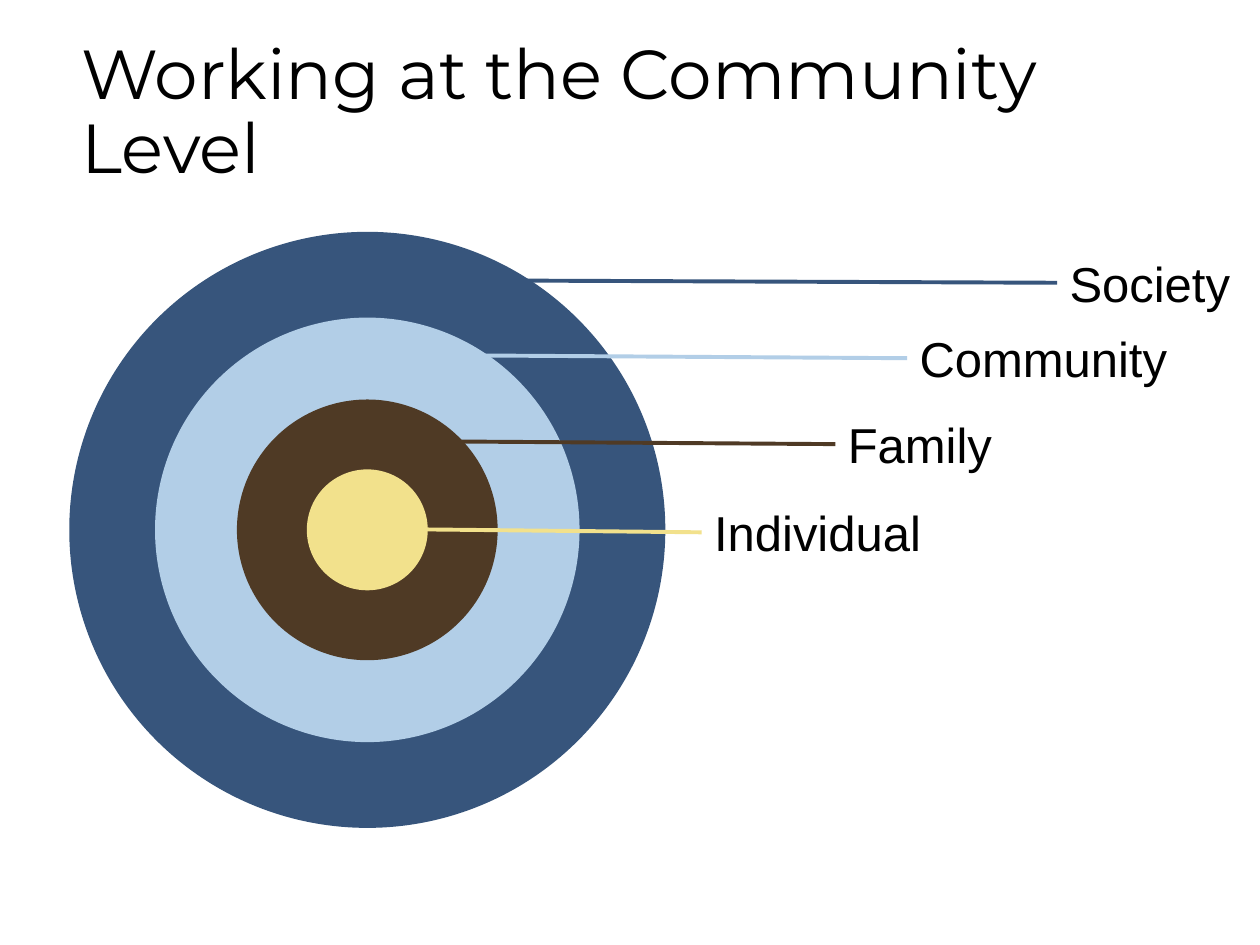
from dataclasses import dataclass

from lxml.etree import SubElement
from pptx import Presentation
from pptx.dml.color import RGBColor
from pptx.enum.shapes import MSO_CONNECTOR as Connector, MSO_SHAPE as Shape
from pptx.enum.text import MSO_ANCHOR as Anchor, MSO_AUTO_SIZE as AutoSize
from pptx.oxml.ns import qn
from pptx.util import Pt


@dataclass(frozen=True)
class Theme:
    text: str = "000000"
    society: str = "37557C"
    community: str = "B2CEE7"
    family: str = "4F3A25"
    individual: str = "F2E18C"
    title_font: str = "Montserrat"
    label_font: str = "Arial"
    title_size: float = 39.6
    label_size: float = 28
    line_width: float = 2.25


THEME = Theme()
CENTER_X, CENTER_Y = 209.9, 302.8
LABEL_HEIGHT = 41
LEFT_SIDE = 1

# name, colour, ring diameter, line start (x, y), label (left, top, width)
LEVELS = [
    ("Society", THEME.society, 340.6, (209.5, 160), (604.1, 141.1, 107.3)),
    ("Community", THEME.community, 242.6, (252, 203), (518.4, 184.2, 163.4)),
    ("Family", THEME.family, 149, (219.6, 252), (477.4, 233.3, 107.3)),
    ("Individual", THEME.individual, 69.1, (228.2, 302.4), (401, 283.7, 136.1)),
]


def add_text(slide, text, left, top, width, height, font, size):
    box = slide.shapes.add_textbox(Pt(left), Pt(top), Pt(width), Pt(height))
    box.text_frame.word_wrap = True
    paragraph = box.text_frame.paragraphs[0]
    paragraph.text = text
    paragraph.font.name = font
    paragraph.font.size = Pt(size)
    paragraph.font.color.rgb = RGBColor.from_string(THEME.text)
    return box


def add_title(slide, text):
    box = add_text(slide, text, 39.6, 20.9, 637.2, 88.6,
                   THEME.title_font, THEME.title_size)
    box.text_frame.vertical_anchor = Anchor.MIDDLE
    box.text_frame.paragraphs[0].line_spacing = 0.9


def add_ring(slide, diameter, color):
    radius = diameter / 2
    ring = slide.shapes.add_shape(
        Shape.OVAL, Pt(CENTER_X - radius), Pt(CENTER_Y - radius),
        Pt(diameter), Pt(diameter))
    ring.shadow.inherit = False
    ring.fill.solid()
    ring.fill.fore_color.rgb = RGBColor.from_string(color)
    ring.line.fill.background()


def add_label(slide, text, left, top, width):
    label = add_text(slide, text, left, top, width, LABEL_HEIGHT,
                     THEME.label_font, THEME.label_size)
    label.text_frame.auto_size = AutoSize.SHAPE_TO_FIT_TEXT
    return label


def add_leader(slide, start, label, color):
    x, y = (Pt(value) for value in start)
    leader = slide.shapes.add_connector(
        Connector.STRAIGHT, x, y, label.left, label.top + label.height // 2)
    leader.end_connect(label, LEFT_SIDE)
    leader.line.width = Pt(THEME.line_width)
    leader.line.color.rgb = RGBColor.from_string(color)
    SubElement(leader._element.spPr, qn("a:effectLst"))


def main():
    presentation = Presentation()
    presentation.slide_width, presentation.slide_height = Pt(720), Pt(540)
    slide = presentation.slides.add_slide(presentation.slide_layouts[6])

    add_title(slide, "Working at the Community Level")

    # Concentric rings, largest at the back
    for _, color, diameter, _, _ in LEVELS:
        add_ring(slide, diameter, color)

    # Labels with their leader lines
    for name, color, _, start, place in LEVELS:
        label = add_label(slide, name, *place)
        add_leader(slide, start, label, color)

    presentation.save("out.pptx")


if __name__ == "__main__":
    main()
